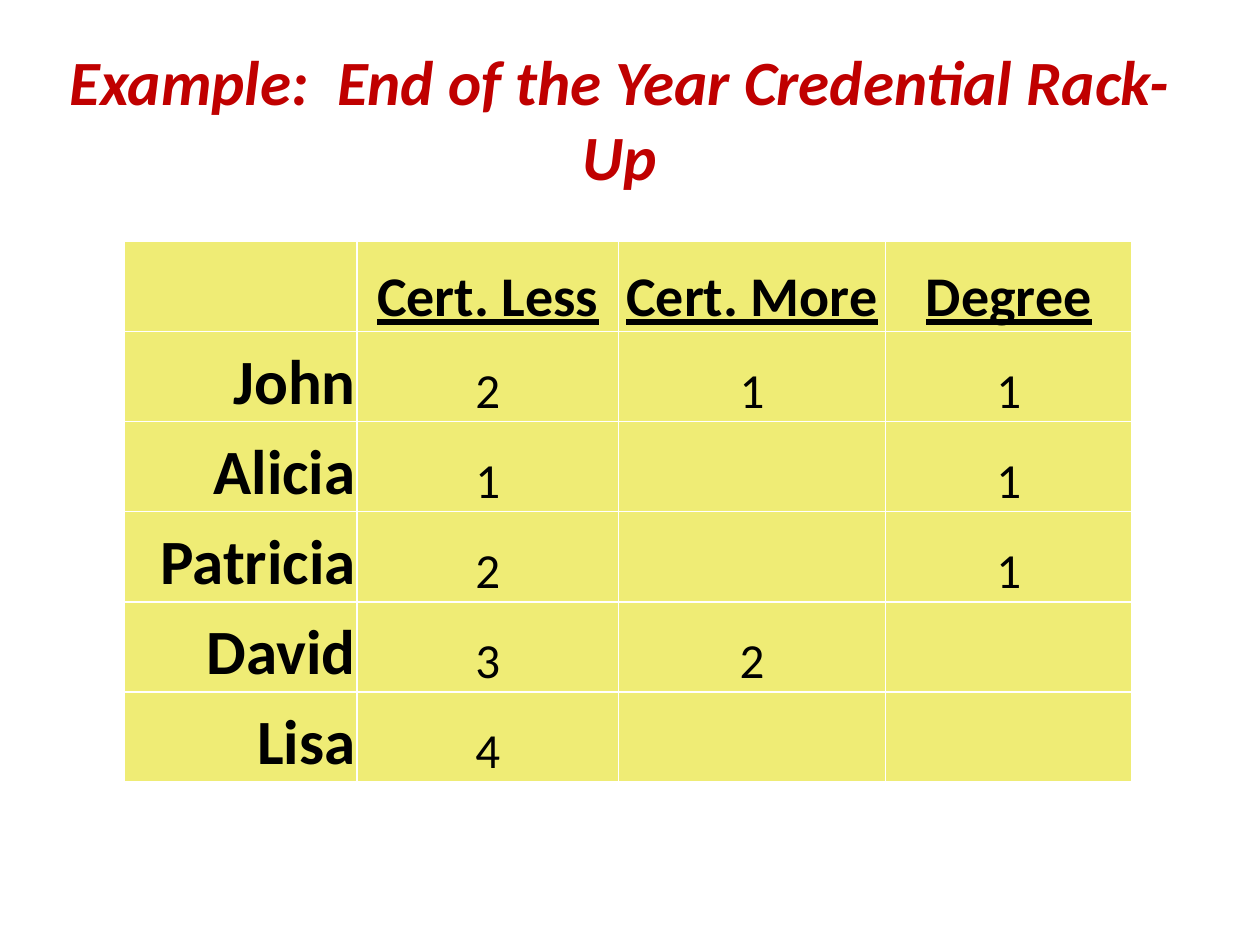
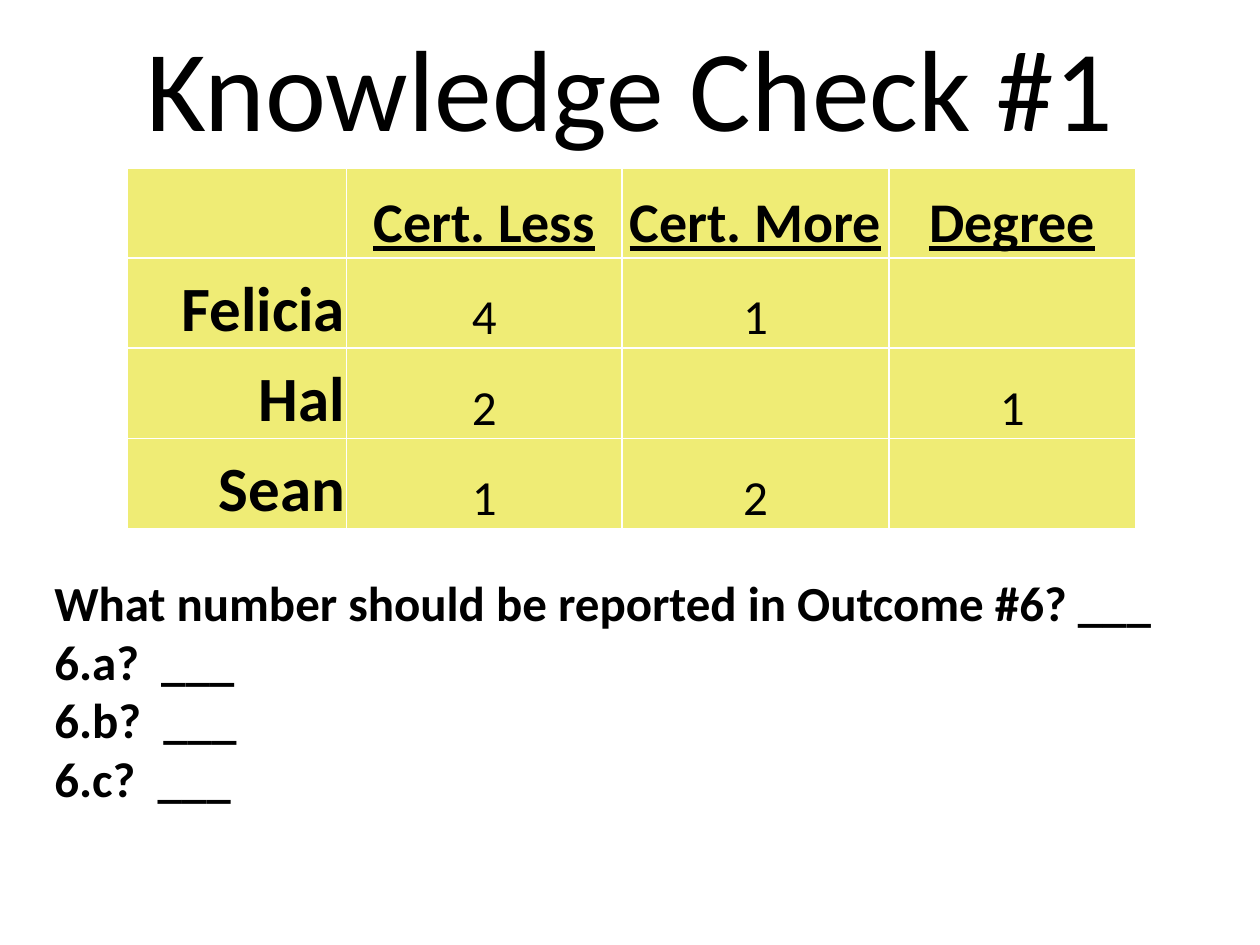
from pptx import Presentation
from pptx.dml.color import RGBColor
from pptx.enum.text import MSO_ANCHOR, MSO_AUTO_SIZE, PP_ALIGN
from pptx.util import Pt

BLACK = RGBColor(0x00, 0x00, 0x00)
RED = RGBColor(0xC0, 0x00, 0x00)
YELLOW = RGBColor(0xEF, 0xEC, 0x75)
FONT = "Calibri"
LEFT, CENTER, RIGHT = PP_ALIGN.LEFT, PP_ALIGN.CENTER, PP_ALIGN.RIGHT
MIDDLE, BOTTOM = MSO_ANCHOR.MIDDLE, MSO_ANCHOR.BOTTOM
NO_FIT, GROW = MSO_AUTO_SIZE.NONE, MSO_AUTO_SIZE.SHAPE_TO_FIT_TEXT
TITLE_ONLY = 5
ROW_HEIGHT = 51.48
HEADER = ["", "Cert. Less", "Cert. More", "Degree"]

SLIDES = [
    {
        "title": "Example:  End of the Year Credential Rack-Up",
        "title_box": (30, 36, 648, 62.5),
        "title_style": {"size": 36, "color": RED, "bold": True, "italic": True},
        "questions": [],
        "table_corner": (71, 138),
        "column_widths": (133, 149.5, 152.5, 141),
        "people": [
            ["John", "2", "1", "1"],
            ["Alicia", "1", "", "1"],
            ["Patricia", "2", "", "1"],
            ["David", "3", "2", ""],
            ["Lisa", "4", "", ""],
        ],
    },
    {
        "title": "Knowledge Check #1",
        "title_box": (36, 4, 648, 90),
        "title_style": {"size": 66},
        "questions": [
            "What number should be reported in Outcome #6? ___",
            "6.a?  ___",
            "6.b?  ___",
            "6.c?  ___",
        ],
        "table_corner": (73, 96),
        "column_widths": (125, 157.5, 152.5, 141),
        "people": [
            ["Felicia", "4", "1", ""],
            ["Hal", "2", "", "1"],
            ["Sean", "1", "2", ""],
        ],
    },
]


def write(paragraph, text, size, align=CENTER, color=BLACK, bold=False,
          italic=False, underline=False):
    paragraph.alignment = align
    run = paragraph.add_run()
    run.text = text
    font = run.font
    font.name, font.size = FONT, Pt(size)
    font.bold, font.italic, font.underline = bold, italic, underline
    font.color.rgb = color


presentation = Presentation()
presentation.slide_width, presentation.slide_height = Pt(720), Pt(540)

for content in SLIDES:
    slide = presentation.slides.add_slide(presentation.slide_layouts[TITLE_ONLY])

    title = slide.shapes.title
    title.left, title.top, title.width, title.height = map(Pt, content["title_box"])
    title.text_frame.auto_size = NO_FIT
    title.text_frame.vertical_anchor = MIDDLE
    write(title.text_frame.paragraphs[0], content["title"], **content["title_style"])

    if content["questions"]:
        question_box = slide.shapes.add_textbox(Pt(24), Pt(323.5), Pt(648), Pt(177))
        frame = question_box.text_frame
        frame.word_wrap = True
        frame.auto_size = GROW
        for index, question in enumerate(content["questions"]):
            paragraph = frame.add_paragraph() if index else frame.paragraphs[0]
            write(paragraph, question, 28, LEFT, bold=True)

    rows = [HEADER] + content["people"]
    widths = content["column_widths"]
    left, top = content["table_corner"]
    table = slide.shapes.add_table(
        len(rows), len(HEADER), Pt(left), Pt(top),
        Pt(sum(widths)), Pt(ROW_HEIGHT * len(rows))).table
    table.first_row = table.horz_banding = False
    for column, width in zip(table.columns, widths):
        column.width = Pt(width)

    for row_index, values in enumerate(rows):
        table.rows[row_index].height = Pt(ROW_HEIGHT)
        for column_index, value in enumerate(values):
            cell = table.cell(row_index, column_index)
            cell.fill.solid()
            cell.fill.fore_color.rgb = YELLOW
            if not value:
                continue
            cell.vertical_anchor = BOTTOM
            cell.margin_left = cell.margin_right = cell.margin_top = Pt(0.75)
            cell.margin_bottom = 0
            paragraph = cell.text_frame.paragraphs[0]
            if row_index == 0:
                write(paragraph, value, 32, bold=True, underline=True)
            elif column_index == 0:
                write(paragraph, value, 36, RIGHT, bold=True)
            else:
                write(paragraph, value, 28)

presentation.save("out.pptx")
